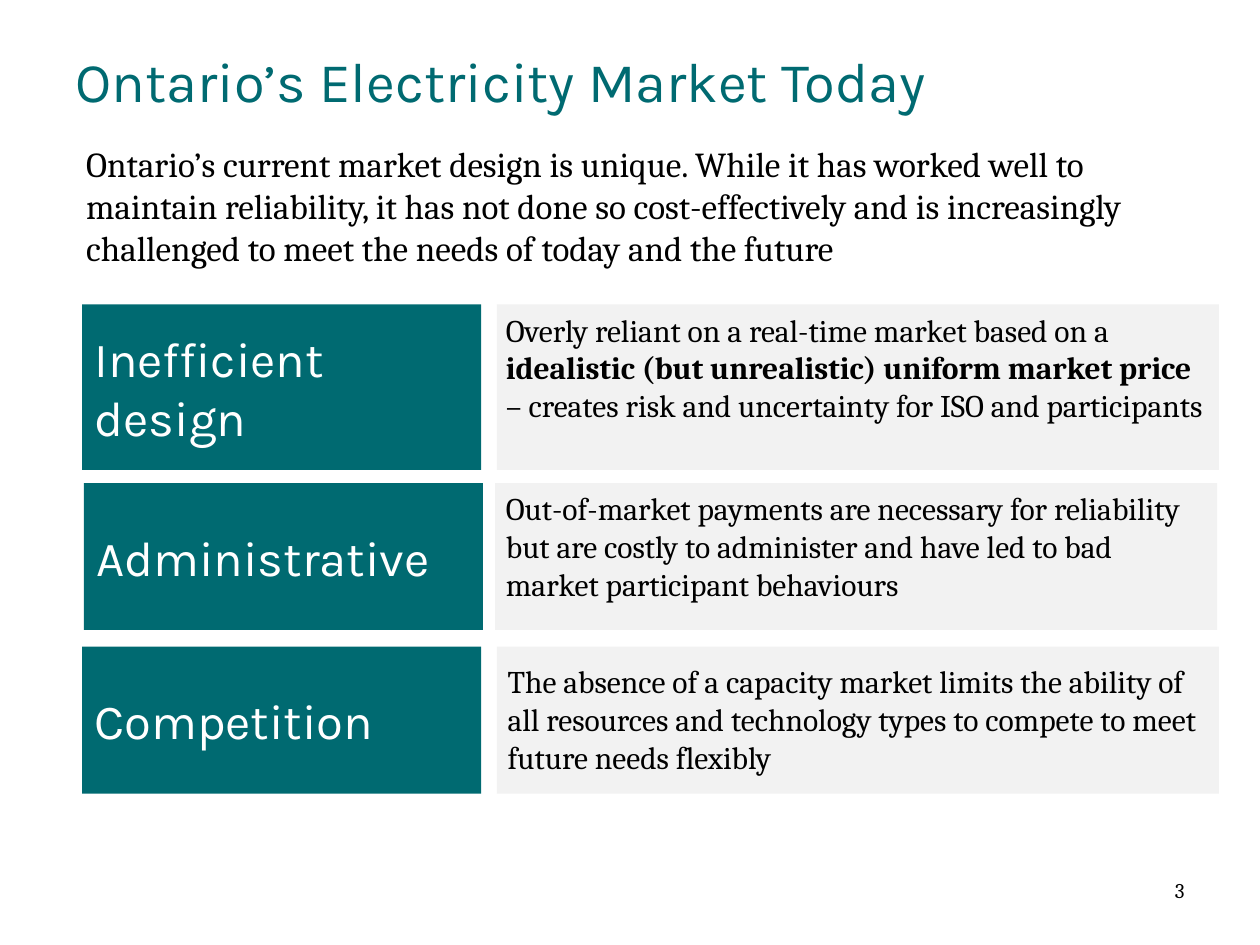
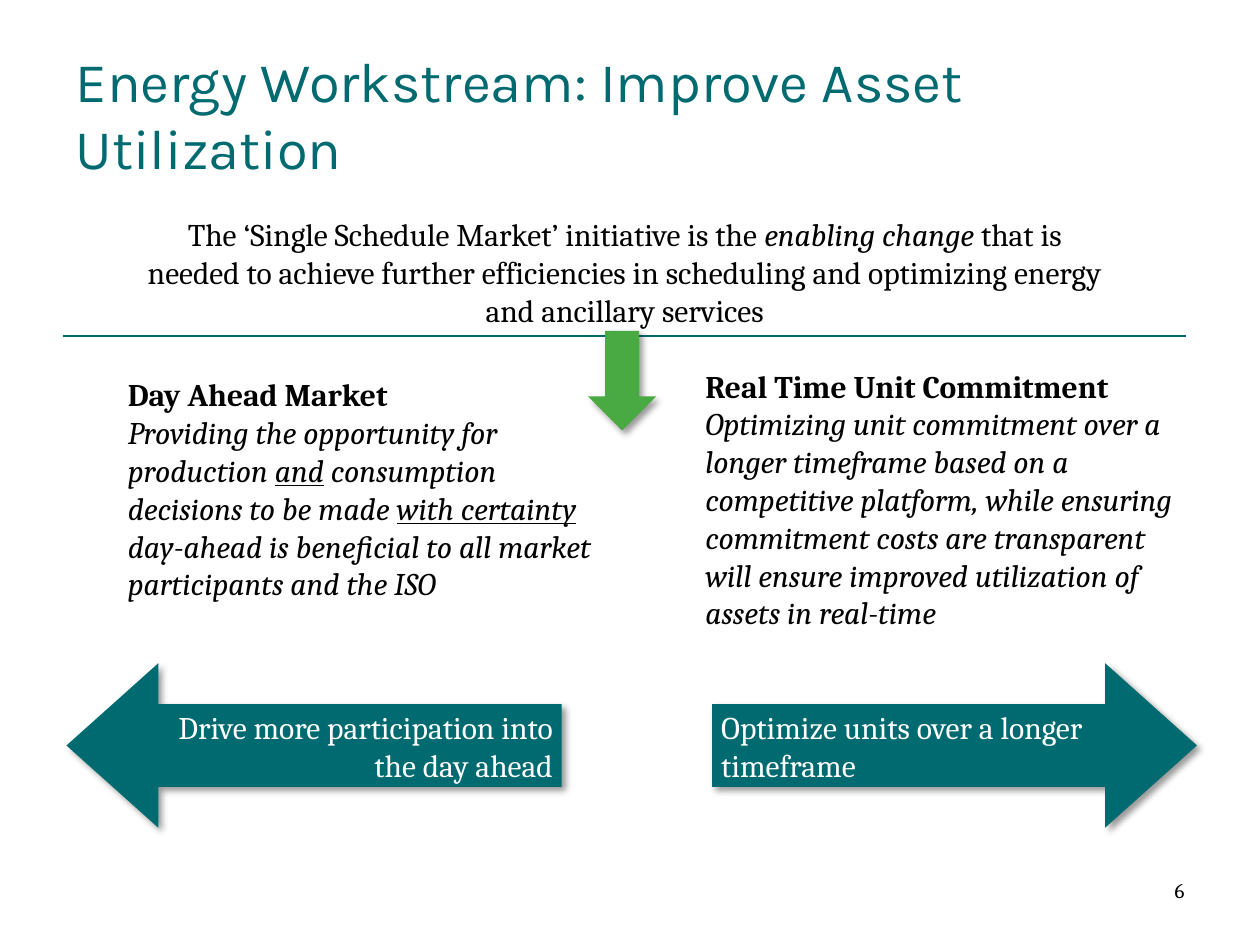
from dataclasses import dataclass
from typing import Any, NamedTuple

from lxml import etree
from pptx import Presentation
from pptx.dml.color import RGBColor
from pptx.enum.shapes import MSO_CONNECTOR, MSO_SHAPE
from pptx.enum.text import MSO_ANCHOR, MSO_AUTO_SIZE, PP_ALIGN
from pptx.oxml.ns import qn
from pptx.util import Pt

RECTANGLE, RIGHT_ARROW = MSO_SHAPE.RECTANGLE, MSO_SHAPE.RIGHT_ARROW
STRAIGHT = MSO_CONNECTOR.STRAIGHT
TOP, MIDDLE = MSO_ANCHOR.TOP, MSO_ANCHOR.MIDDLE
LEFT, CENTER, RIGHT = PP_ALIGN.LEFT, PP_ALIGN.CENTER, PP_ALIGN.RIGHT
NO_FIT, GROW = MSO_AUTO_SIZE.NONE, MSO_AUTO_SIZE.SHAPE_TO_FIT_TEXT
TITLE_AND_BODY, TITLE_ONLY = 1, 5

# Shared colours and text formats
TEAL, GREEN, GREY = "006A71", "49A942", "F2F2F2"
BLACK, WHITE = "000000", "FFFFFF"
TITLE = {"name": "Karla", "size": Pt(32), "color": TEAL}
LABEL = {"name": "Karla", "size": Pt(28), "color": WHITE}
INTRO = {"name": "Cambria", "size": Pt(20), "color": BLACK}
DETAIL = {**INTRO, "size": Pt(18)}
ARROW_TEXT = {**DETAIL, "color": WHITE}
PAGE_NUMBER = {**INTRO, "size": Pt(12)}
BOLD, ITALIC = {"bold": True}, {"italic": True}
ITALIC_UNDERLINED = {"italic": True, "underline": True}


class Frame(NamedTuple):
    left: float
    top: float
    width: float
    height: float

    def lengths(self) -> list[Pt]:
        return [Pt(value) for value in self]


class Run(NamedTuple):
    text: str
    extra: dict[str, Any] = {}


Paragraphs = list[list[Run]]


@dataclass
class Issue:
    label: str
    detail: list[Run]
    top: float
    height: float
    label_left: float
    panel_left: float
    detail_left: float
    detail_top: float
    detail_height: float


@dataclass
class Arrow:
    frame: Frame
    rotation: int
    color: str
    adjustments: tuple[float, float] = (0.5, 0.5)


@dataclass
class Note:
    frame: Frame
    paragraphs: Paragraphs
    text_format: dict[str, Any]
    align: Any = LEFT


def rgb(color: str) -> RGBColor:
    return RGBColor.from_string(color)


# Text helpers
def format_font(font, values: dict[str, Any]) -> None:
    for key, value in values.items():
        if key == "color":
            font.color.rgb = rgb(value)
        else:
            setattr(font, key, value)


def write(shape, paragraphs: Paragraphs, text_format: dict[str, Any],
          align=LEFT, anchor=TOP, fit=NO_FIT) -> None:
    frame = shape.text_frame
    frame.word_wrap = True
    frame.auto_size = fit
    frame.vertical_anchor = anchor
    for index, runs in enumerate(paragraphs):
        paragraph = frame.add_paragraph() if index else frame.paragraphs[0]
        paragraph.alignment = align
        paragraph.space_before = Pt(0)
        for text, extra in runs:
            run = paragraph.add_run()
            run.text = text
            format_font(run.font, {**text_format, **extra})


def fill_placeholder(shape, frame: Frame, text: str,
                     text_format: dict[str, Any]) -> None:
    shape.left, shape.top, shape.width, shape.height = frame.lengths()
    write(shape, [[Run(text)]], text_format)
    properties = shape.text_frame.paragraphs[0]._p.get_or_add_pPr()
    properties.set("marL", "0")
    properties.set("indent", "0")
    etree.SubElement(properties, qn("a:buNone"))


def add_note(slide, note: Note, fit=GROW) -> None:
    box = slide.shapes.add_textbox(*note.frame.lengths())
    write(box, note.paragraphs, note.text_format, note.align, fit=fit)


# Shape helpers
def add_block(slide, kind, frame: Frame, color: str):
    block = slide.shapes.add_shape(kind, *frame.lengths())
    block.shadow.inherit = False
    block.fill.solid()
    block.fill.fore_color.rgb = rgb(color)
    block.line.fill.background()
    return block


def add_arrow(slide, arrow: Arrow) -> None:
    shape = add_block(slide, RIGHT_ARROW, arrow.frame, arrow.color)
    shape.rotation = arrow.rotation
    for index, value in enumerate(arrow.adjustments):
        shape.adjustments[index] = value
    effects = shape._element.spPr.find(qn("a:effectLst"))
    shadow = etree.SubElement(
        effects, qn("a:outerShdw"), blurRad=str(Pt(4)), dist=str(Pt(3)),
        dir=str(45 * 60000), algn="tl", rotWithShape="0")
    tint = etree.SubElement(shadow, qn("a:srgbClr"), val=BLACK)
    etree.SubElement(tint, qn("a:alpha"), val="40000")


def add_rule(slide, left: float, right: float, y: float) -> None:
    rule = slide.shapes.add_connector(STRAIGHT, Pt(left), Pt(y), Pt(right), Pt(y))
    rule.line.color.rgb = rgb(TEAL)
    rule.line.width = Pt(1)
    etree.SubElement(rule._element.spPr, qn("a:effectLst"))


def add_slide(deck, layout: int, title: str, title_width: float, number: str):
    slide = deck.slides.add_slide(deck.slide_layouts[layout])
    fill_placeholder(slide.shapes.title, Frame(36, 23, title_width, 63), title, TITLE)
    add_note(slide, Note(Frame(642, 498, 42, 42), [[Run(number)]],
                         PAGE_NUMBER, RIGHT), NO_FIT)
    return slide


# Market issues
ISSUES = [
    Issue("Inefficient design",
          [Run("Overly reliant on a real-time market based on a "),
           Run("idealistic (but unrealistic) uniform market price ", BOLD),
           Run("– creates risk and uncertainty for ISO and participants")],
          174, 94.5, 47, 284, 282, 174, 94.5),
    Issue("Administrative",
          [Run("Out-of-market payments are necessary for reliability but are costly "
               "to administer and have led to bad market participant behaviours")],
          276, 84, 48, 283, 282, 276, 73),
    Issue("Competition",
          [Run("The absence of a capacity market limits the ability of all resources "
               "and technology types to compete to meet future needs flexibly")],
          369.5, 84, 47, 284, 283, 375, 73),
]

# Workstream arrows and their texts
WIDE_HEAD = (0.503, 0.558)
ARROWS = [
    Arrow(Frame(407, 379, 277, 94), 0, TEAL, WIDE_HEAD),
    Arrow(Frame(38, 379, 283, 94), 180, TEAL, WIDE_HEAD),
    Arrow(Frame(327, 198, 57, 39), 90, GREEN),
]
NOTES = [
    Note(Frame(75, 119.5, 564, 73),
         [[Run("The ‘Single Schedule Market’ initiative is the "),
           Run("enabling change ", ITALIC),
           Run("that is needed to achieve further efficiencies in scheduling and "
               "optimizing energy and ancillary services")]],
         DETAIL, CENTER),
    Note(Frame(66, 211, 282, 138),
         [[Run("Day Ahead Market", BOLD)],
          [Run("Providing the opportunity for production ", ITALIC),
           Run("and", ITALIC_UNDERLINED),
           Run(" consumption decisions to be made ", ITALIC),
           Run("with certainty ", ITALIC_UNDERLINED),
           Run("day-ahead is beneficial to all market participants and the ISO",
               ITALIC)]],
         DETAIL),
    Note(Frame(396, 206, 288, 160),
         [[Run("Real Time Unit Commitment", BOLD)],
          [Run("Optimizing unit commitment over a longer timeframe based on a "
               "competitive platform, while ensuring commitment costs are transparent "
               "will ensure improved utilization of assets in real-time", ITALIC)]],
         DETAIL),
    Note(Frame(405, 401, 279, 51),
         [[Run("Optimize units over a longer timeframe")]], ARROW_TEXT),
    Note(Frame(86, 401, 237, 51),
         [[Run("Drive more participation into the day ahead")]], ARROW_TEXT, RIGHT),
]


def build_market_today(deck) -> None:
    slide = add_slide(deck, TITLE_AND_BODY, "Ontario’s Electricity Market Today",
                      678, "3")
    fill_placeholder(
        slide.placeholders[1], Frame(42, 78, 630, 78),
        "Ontario’s current market design is unique. While it has worked well to "
        "maintain reliability, it has not done so cost-effectively and is "
        "increasingly challenged to meet the needs of today and the future", INTRO)
    for issue in ISSUES:
        add_block(slide, RECTANGLE,
                  Frame(issue.panel_left, issue.top, 412.5, issue.height), GREY)
        label = add_block(slide, RECTANGLE,
                          Frame(issue.label_left, issue.top, 228, issue.height), TEAL)
        write(label, [[Run(issue.label)]], LABEL, anchor=MIDDLE)
        add_note(slide, Note(Frame(issue.detail_left, issue.detail_top, 414,
                                   issue.detail_height), [issue.detail], DETAIL))


def build_energy_workstream(deck) -> None:
    slide = add_slide(deck, TITLE_ONLY,
                      "Energy Workstream: Improve Asset Utilization", 654, "6")
    add_rule(slide, 36, 678, 192)
    for arrow in ARROWS:
        add_arrow(slide, arrow)
    for note in NOTES:
        add_note(slide, note)


def main() -> None:
    deck = Presentation()
    deck.slide_width, deck.slide_height = Pt(720), Pt(540)
    build_market_today(deck)
    build_energy_workstream(deck)
    deck.save("out.pptx")


if __name__ == "__main__":
    main()
